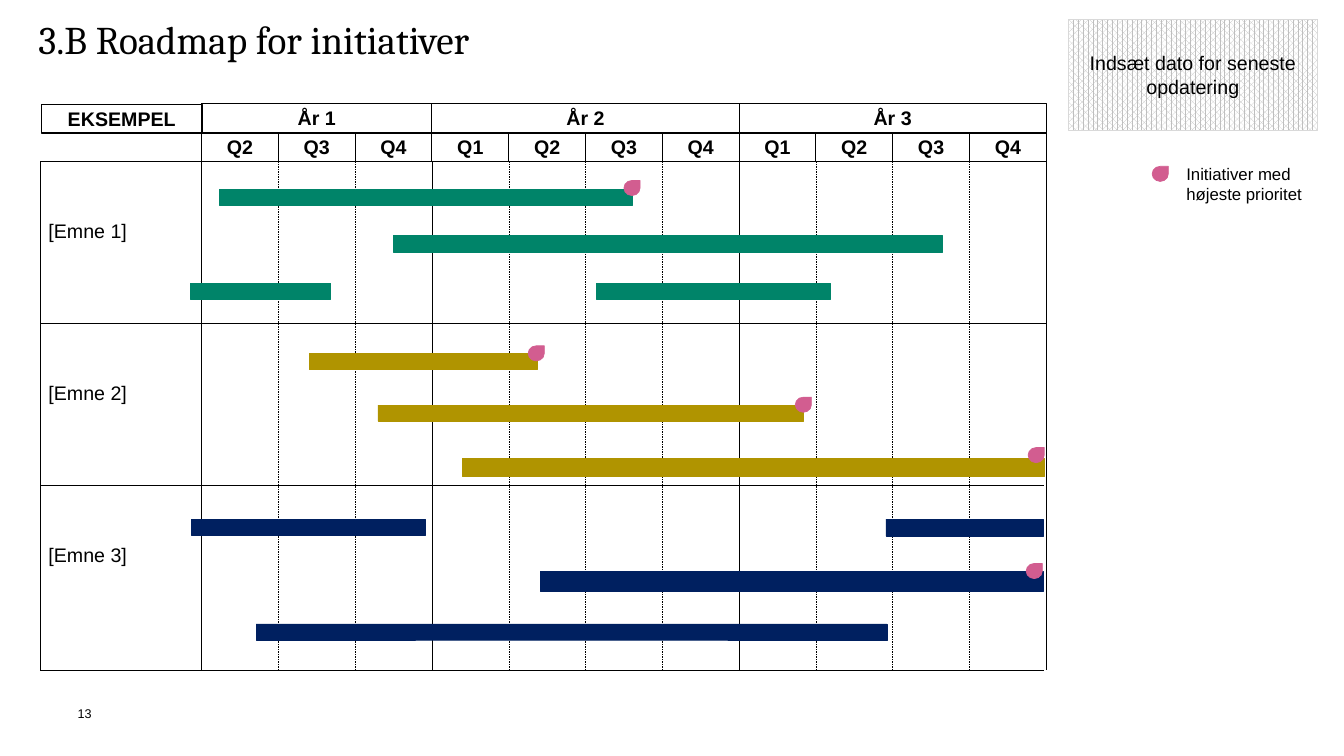
from lxml import etree
from pptx import Presentation
from pptx import util as u
from pptx.dml.color import RGBColor
from pptx.enum import dml, shapes, text
from pptx.oxml import ns

BLACK, GREEN, GOLD, NAVY, PINK = "000000", "008469", "B09400", "002060", "D25D90"
LEFT, START, STEP = 28.8, 144, 54.85
TOP, HEAD, BODY, END = 74.2, 95, 115.2, 478.8
CELL = 20.2
YEARS = [("År 1", 0, 3), ("År 2", 3, 4), ("År 3", 7, 4)]
QUARTERS = ["Q2", "Q3", "Q4"] + ["Q1", "Q2", "Q3", "Q4"] * 2
TOPICS = [("[Emne 1]", 156.2), ("[Emne 2]", 272.2), ("[Emne 3]", 388.1)]
BARS = [
    (GREEN, [(157, 135.4, 294.5, 11.5), (280.8, 168.5, 392.4, 11.5),
             (136.1, 202.3, 100.1, 11.5), (426.2, 202.3, 167, 11.5)]),
    (GOLD, [(221, 252.7, 162.7, 11.5), (270, 289.4, 303.8, 11.5),
            (330.5, 327.6, 415.4, 13)]),
    (NAVY, [(136.8, 370.8, 167, 11.5), (632.9, 370.8, 112.3, 12.2),
            (385.9, 408.2, 359.3, 14.4), (182.9, 445.7, 450.7, 11.5)]),
]
DROPS = [(445.7, 128.9), (377.3, 247), (568.1, 283.7), (734.4, 319.7),
         (733, 402.5), (823, 118.8)]


def tint(code):
    return RGBColor.from_string(code)


def edge(col):
    return START + col * STEP


def write(frame, words, size, font="Arial", bold=False, align=None):
    para = frame.paragraphs[0]
    para.alignment = align
    run = para.add_run()
    run.text = words
    run.font.size = u.Pt(size)
    run.font.name = font
    run.font.bold = bold
    run.font.color.rgb = tint(BLACK)
    return para


def inset(frame, side=0, end=0):
    frame.margin_left = frame.margin_right = u.Pt(side)
    frame.margin_top = frame.margin_bottom = u.Pt(end)


def label(slide, box, words, size, font="Arial"):
    frame = slide.shapes.add_textbox(*map(u.Pt, box)).text_frame
    inset(frame)
    frame.word_wrap = True
    return write(frame, words, size, font)


def block(slide, kind, box, fill=None, line=BLACK, width=0.5):
    shape = slide.shapes.add_shape(kind, *map(u.Pt, box))
    shape.shadow.inherit = False
    if fill:
        shape.fill.solid()
        shape.fill.fore_color.rgb = tint(fill)
    else:
        shape.fill.background()
    shape.line.color.rgb = tint(line)
    shape.line.width = u.Pt(width)
    return shape


def cell(slide, box, words):
    frame = block(slide, shapes.MSO_SHAPE.RECTANGLE, box, width=0.75).text_frame
    inset(frame, 0, 2.2)
    frame.word_wrap = False
    frame.vertical_anchor = text.MSO_ANCHOR.MIDDLE
    write(frame, words, 14, bold=True, align=text.PP_ALIGN.CENTER)


def rule(slide, ends, width=0.25, dash=False):
    line = slide.shapes.add_connector(
        shapes.MSO_CONNECTOR.STRAIGHT, *map(u.Pt, ends))
    line.line.color.rgb = tint(BLACK)
    line.line.width = u.Pt(width)
    if dash:
        line.line.dash_style = dml.MSO_LINE.DASH
    props = line._element.spPr
    etree.SubElement(props, ns.qn("a:effectLst"))


def heads(slide):
    for name, col, span in YEARS:
        cell(slide, (edge(col), TOP, span * STEP, CELL), name)
    for col, name in enumerate(QUARTERS):
        cell(slide, (edge(col), HEAD, STEP, CELL), name)
    cell(slide, (29.5, 74.8, 115, CELL), "EKSEMPEL")


def grid(slide):
    solid = {0: 0.75, 3: 0.25, 7: 0.25, len(QUARTERS): 0.25}
    rule(slide, (LEFT, BODY, LEFT, END), 0.75)
    for col in range(len(QUARTERS) + 1):
        x = edge(col)
        rule(slide, (x, BODY, x, END), solid.get(col, 0.25), col not in solid)
    rule(slide, (LEFT, BODY, START, BODY), 0.5)
    for y, right, width in [(231.1, 747.4, 0.25), (346.3, 746, 0.25), (END, 746, 0.75)]:
        rule(slide, (LEFT, y, right, y), width)


def plan(slide):
    for name, y in TOPICS:
        label(slide, (34.6, y, 100, 33.8), name, 14)
    for shade, boxes in BARS:
        for box in boxes:
            block(slide, shapes.MSO_SHAPE.RECTANGLE, box, shade, shade)
    for x, y in DROPS:
        block(slide, shapes.MSO_SHAPE.TEAR, (x, y, 11.5, 10.8), PINK, PINK)


def stamp(slide):
    shape = block(slide, shapes.MSO_SHAPE.RECTANGLE,
                  (763.2, 13.7, 177.8, 79.2), line="D9D9D9")
    shape.fill.patterned()
    shape.fill.pattern = dml.MSO_PATTERN.PERCENT_70
    shape.fill.fore_color.rgb = tint("BFBFBF")
    shape.fill.back_color.rgb = tint("FFFFFF")
    frame = shape.text_frame
    inset(frame, 7.2, 3.6)
    frame.word_wrap = True
    frame.vertical_anchor = text.MSO_ANCHOR.MIDDLE
    write(frame, "Indsæt dato for seneste opdatering", 14,
          align=text.PP_ALIGN.CENTER)


def main():
    deck = Presentation()
    deck.slide_width, deck.slide_height = u.Pt(960), u.Pt(540)
    slide = deck.slides.add_slide(deck.slide_layouts[6])
    title = label(slide, (27.4, 14.4, 720, 39.6),
                  "3.B Roadmap for initiativer", 28, "Cambria")
    title.line_spacing = 0.9
    heads(slide)
    grid(slide)
    plan(slide)
    label(slide, (847.4, 116.6, 89.3, 80.6), "Initiativer med højeste prioritet", 12)
    stamp(slide)
    label(slide, (55.4, 504, 22.3, 21.6), "13", 9)
    deck.save("out.pptx")


if __name__ == "__main__":
    main()
